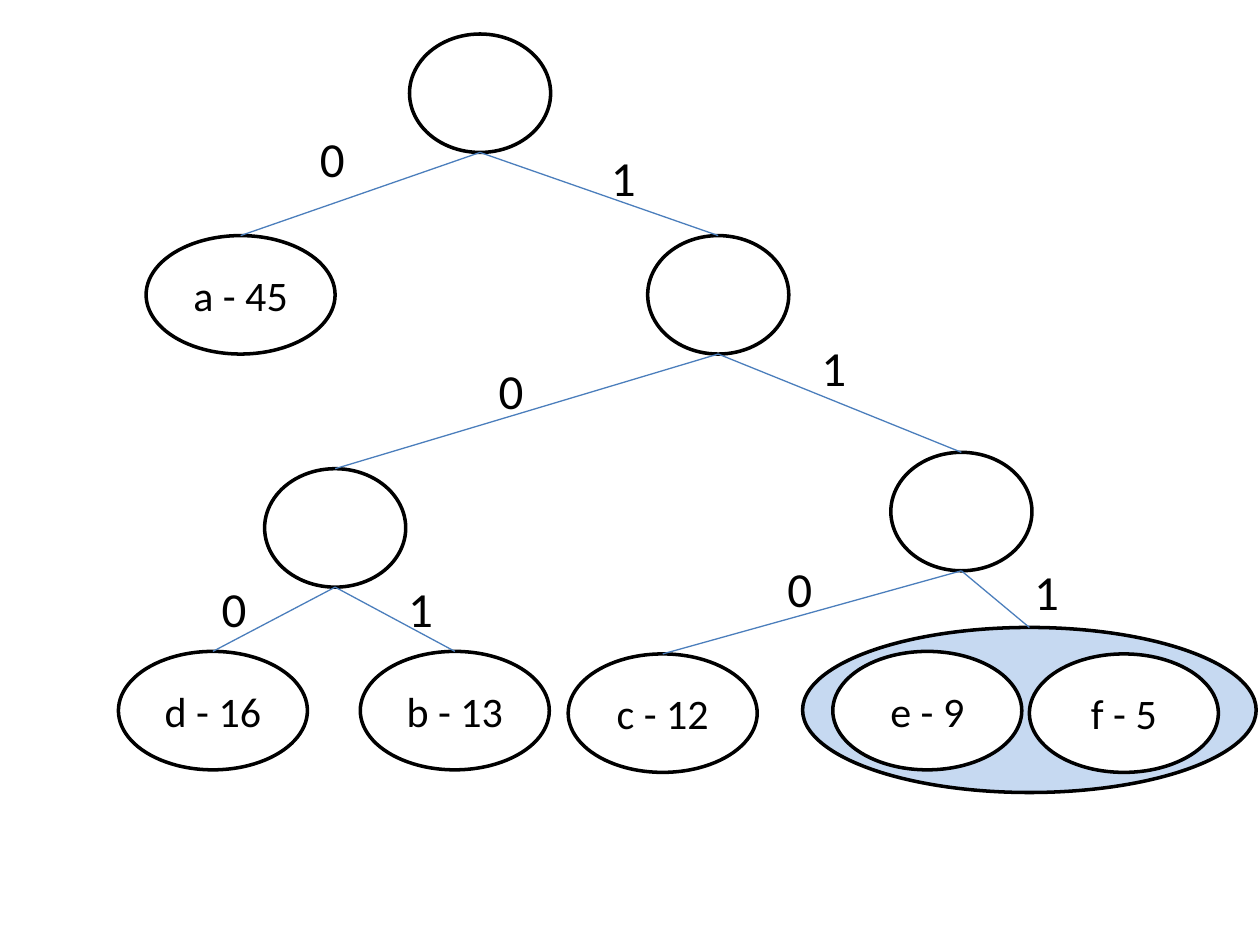
from pptx import Presentation
from pptx.dml.color import RGBColor as Rgb
from pptx.enum.shapes import MSO_CONNECTOR as Link, MSO_SHAPE as Form
from pptx.enum.text import MSO_ANCHOR as Anchor, MSO_AUTO_SIZE as Fit, PP_ALIGN as Align
from pptx.oxml.ns import qn
from pptx.util import Pt

SCALE = 9144


def px(num):
    """Turn px, 100 to the inch, into EMU."""
    return int(num * SCALE)


def tint(code):
    """Turn a hex string into a colour."""
    return Rgb.from_string(code)


def write(frame, text, size=24, color="000000", align=Align.LEFT, anchor=Anchor.TOP):
    """Put formatted text into a text frame."""
    frame.word_wrap = True
    frame.vertical_anchor = anchor
    para = frame.paragraphs[0]
    para.alignment = align
    run = para.add_run()
    run.text = text
    run.font.name = "Calibri"
    run.font.size = Pt(size)
    run.font.color.rgb = tint(color)


class Tree:
    """Draw a binary code tree on one slide."""

    ink, edge, paper = "000000", "4B7EBC", "FFFFFF"
    tall = 94

    def __init__(self, slide):
        """Keep the slide to draw on."""
        self.slide = slide

    def oval(self, mid, top, wide, tall=tall, fill=paper):
        """Draw an outlined ellipse centred on mid."""
        shape = self.slide.shapes.add_shape(
            Form.OVAL, px(mid - wide / 2), px(top), px(wide), px(tall))
        shape.shadow.inherit = False
        shape.fill.solid()
        shape.fill.fore_color.rgb = tint(fill)
        shape.line.color.rgb = tint(self.ink)
        shape.line.width = Pt(2)
        return shape

    def fork(self, mid, top):
        """Draw an empty inner node."""
        return self.oval(mid, top, 112)

    def leaf(self, mid, top, text):
        """Draw a node with its symbol and count."""
        shape = self.oval(mid, top, 150)
        write(shape.text_frame, text, align=Align.CENTER, anchor=Anchor.MIDDLE)
        return shape

    def branch(self, start, end):
        """Join the bottom of one node to the top of another."""
        line = self.slide.shapes.add_connector(
            Link.STRAIGHT, start.left + start.width // 2, start.top + start.height,
            end.left + end.width // 2, end.top)
        line.line.color.rgb = tint(self.edge)
        line.line.width = Pt(0.75)
        props = line._element.spPr
        props.append(props.makeelement(qn("a:effectLst"), {}))

    def bit(self, left, top, text):
        """Write the code digit of a branch."""
        box = self.slide.shapes.add_textbox(px(left), px(top), px(51), px(57))
        write(box.text_frame, text, size=28)
        box.text_frame.auto_size = Fit.SHAPE_TO_FIT_TEXT


def main():
    """Build and save the slide."""
    deck = Presentation()
    deck.slide_width, deck.slide_height = px(1000), px(750)
    tree = Tree(deck.slides.add_slide(deck.slide_layouts[6]))

    pair = tree.oval(817, 498, 360, 131, "C6D9F1")
    leaves = [("а - 45", 191, 187), ("d - 16", 169, 517), ("b - 13", 361, 517),
              ("c - 12", 526, 519), ("e - 9", 736, 517), ("f - 5", 892, 519)]
    a, d, b, c, *_ = [tree.leaf(mid, top, text) for text, mid, top in leaves]
    forks = [(381, 27), (570, 187), (266, 372), (763, 359)]
    root, inner, left, right = [tree.fork(*spot) for spot in forks]

    splits = [
        (root, (a, 244, 97), (inner, 475, 112)),
        (inner, (left, 386, 281), (right, 642, 263)),
        (left, (d, 166, 454), (b, 314, 454)),
        (right, (c, 615, 438), (pair, 811, 441)),
    ]
    for start, *ends in splits:
        for digit, (end, x, y) in enumerate(ends):
            tree.branch(start, end)
            tree.bit(x, y, str(digit))

    deck.save("out.pptx")


if __name__ == "__main__":
    main()
